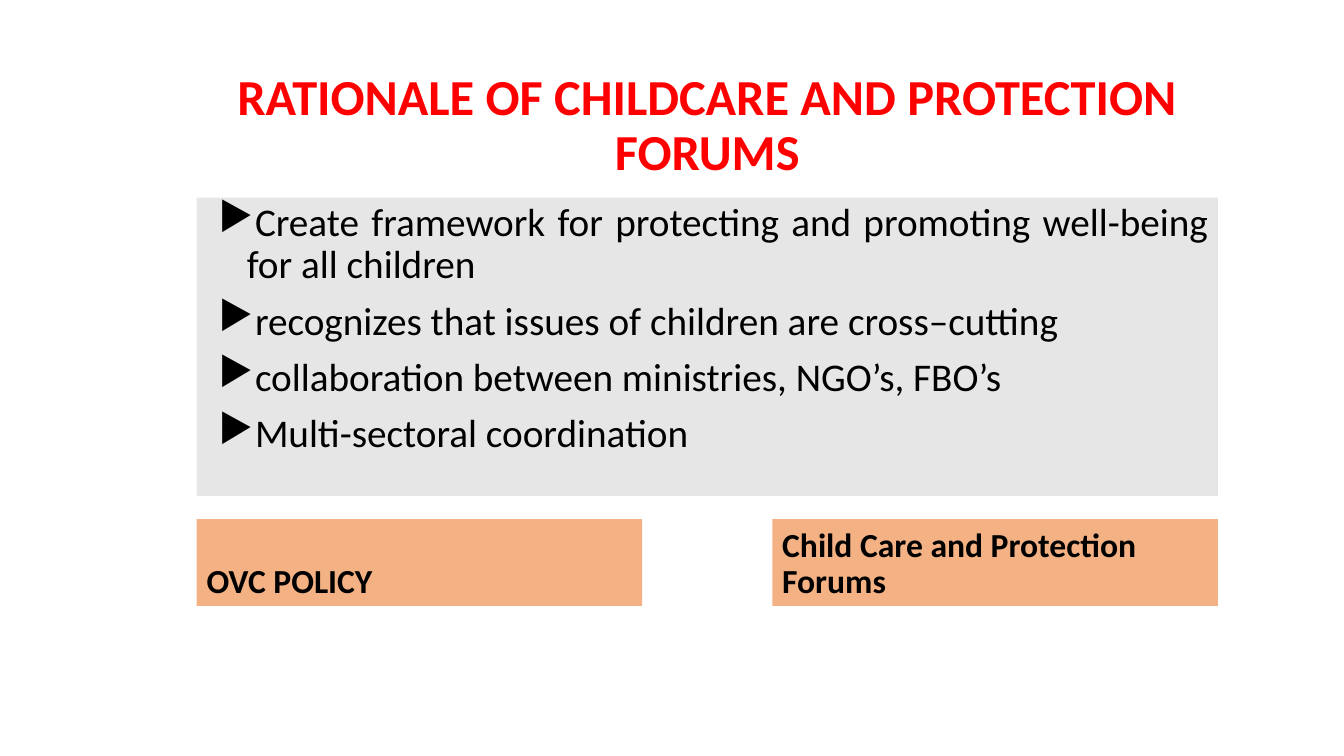
from dataclasses import dataclass

from lxml.etree import SubElement
from pptx import Presentation
from pptx.dml.color import RGBColor
from pptx.enum.shapes import MSO_SHAPE as Shape
from pptx.enum.text import MSO_ANCHOR as Anchor, PP_ALIGN as Align
from pptx.oxml.ns import qn
from pptx.util import Inches, Pt


@dataclass(frozen=True)
class Theme:
    font: str = "Calibri"
    ink: str = "000000"
    title: str = "FF0000"
    panel: str = "E7E6E6"
    label: str = "F4B183"
    title_size: int = 36
    body_size: int = 28
    label_size: int = 24
    line_spacing: float = 0.9
    space_before: int = 10


THEME = Theme()
WIDTH, HEIGHT = Inches(13.33), Inches(7.5)
LEFT, CONTENT_WIDTH = 14.63, 75.99
LABEL_WIDTH = 33.16
LABELS = ["OVC POLICY", "Child Care and Protection Forums"]
REASONS = [
    "Create framework for protecting and promoting well-being for all children",
    "recognizes that issues of children are cross–cutting",
    "collaboration between ministries, NGO’s, FBO’s",
    "Multi-sectoral coordination",
]


def percent_box(left, top, width, height):
    return [
        round(share * length / 100)
        for share, length in zip((left, top, width, height), (WIDTH, HEIGHT) * 2)
    ]


def add_bullet(paragraph, character="▶", margin=0.4, hanging=0.28):
    properties = paragraph._p.get_or_add_pPr()
    properties.set("marL", str(Inches(margin)))
    properties.set("indent", str(-Inches(hanging)))
    SubElement(properties, qn("a:buChar")).set("char", character)


def write_text(shape, lines, size, color=THEME.ink, bold=False,
               align=Align.LEFT, anchor=Anchor.TOP, bulleted=False):
    frame = shape.text_frame
    frame.word_wrap = True
    frame.vertical_anchor = anchor
    frame.text = "\n".join(lines)
    for paragraph in frame.paragraphs:
        paragraph.alignment = align
        paragraph.line_spacing = THEME.line_spacing
        paragraph.space_before = Pt(THEME.space_before)
        if bulleted:
            add_bullet(paragraph)
        for run in paragraph.runs:
            run.font.name = THEME.font
            run.font.size = Pt(size)
            run.font.bold = bold
            run.font.color.rgb = RGBColor.from_string(color)


def add_title(slide, text, box):
    shape = slide.shapes.add_textbox(*percent_box(*box))
    write_text(shape, [text], THEME.title_size, color=THEME.title, bold=True,
               align=Align.CENTER, anchor=Anchor.MIDDLE)


def add_panel(slide, lines, box, fill, size, **text_format):
    shape = slide.shapes.add_shape(Shape.RECTANGLE, *percent_box(*box))
    shape.shadow.inherit = False
    shape.fill.solid()
    shape.fill.fore_color.rgb = RGBColor.from_string(fill)
    shape.line.fill.background()
    write_text(shape, lines, size, **text_format)


def main():
    presentation = Presentation()
    presentation.slide_width, presentation.slide_height = WIDTH, HEIGHT
    slide = presentation.slides.add_slide(presentation.slide_layouts[6])

    add_title(slide, "RATIONALE OF CHILDCARE AND PROTECTION FORUMS",
              (LEFT, 8.8, CONTENT_WIDTH, 15.87))
    add_panel(slide, REASONS, (LEFT, 26.13, CONTENT_WIDTH, 39.47),
              THEME.panel, THEME.body_size, align=Align.JUSTIFY, bulleted=True)
    for column, label in enumerate(LABELS):
        left = LEFT + column * (CONTENT_WIDTH - LABEL_WIDTH)
        add_panel(slide, [label], (left, 68.67, LABEL_WIDTH, 11.47),
                  THEME.label, THEME.label_size, bold=True, anchor=Anchor.BOTTOM)

    presentation.save("out.pptx")


if __name__ == "__main__":
    main()
